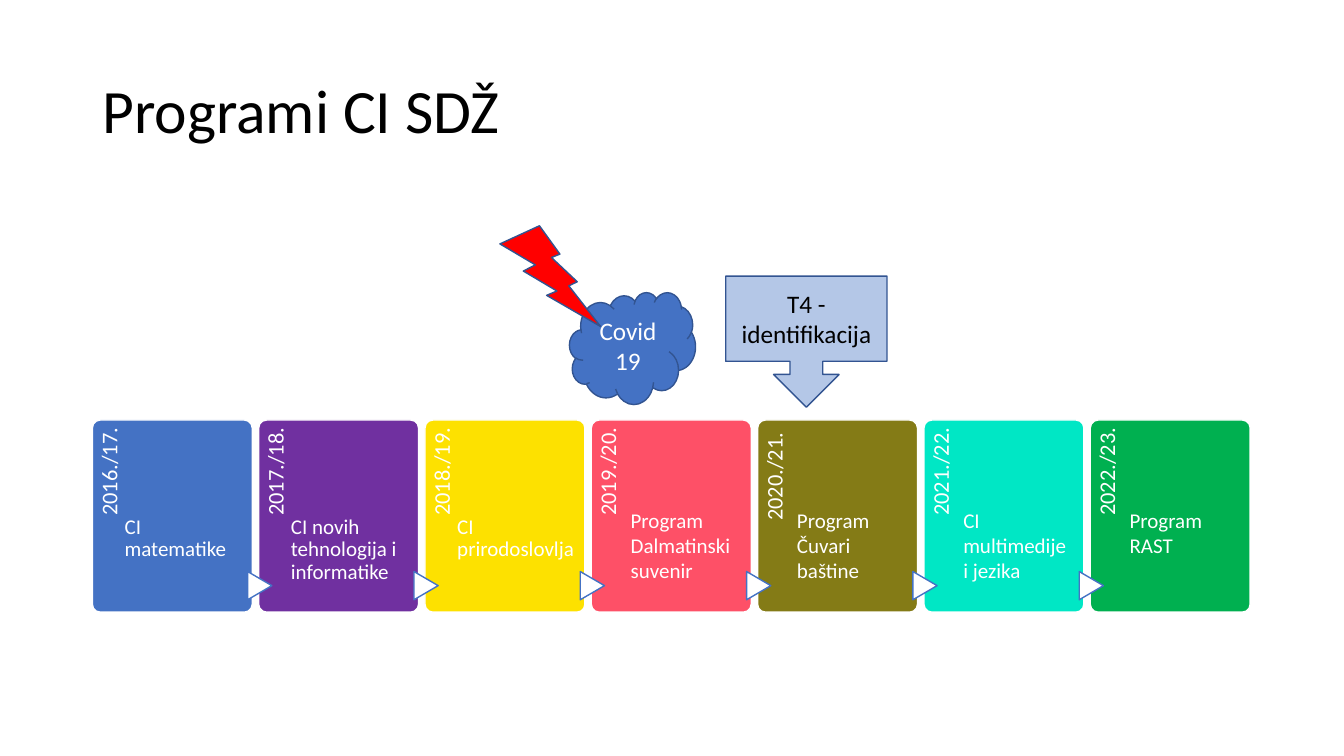
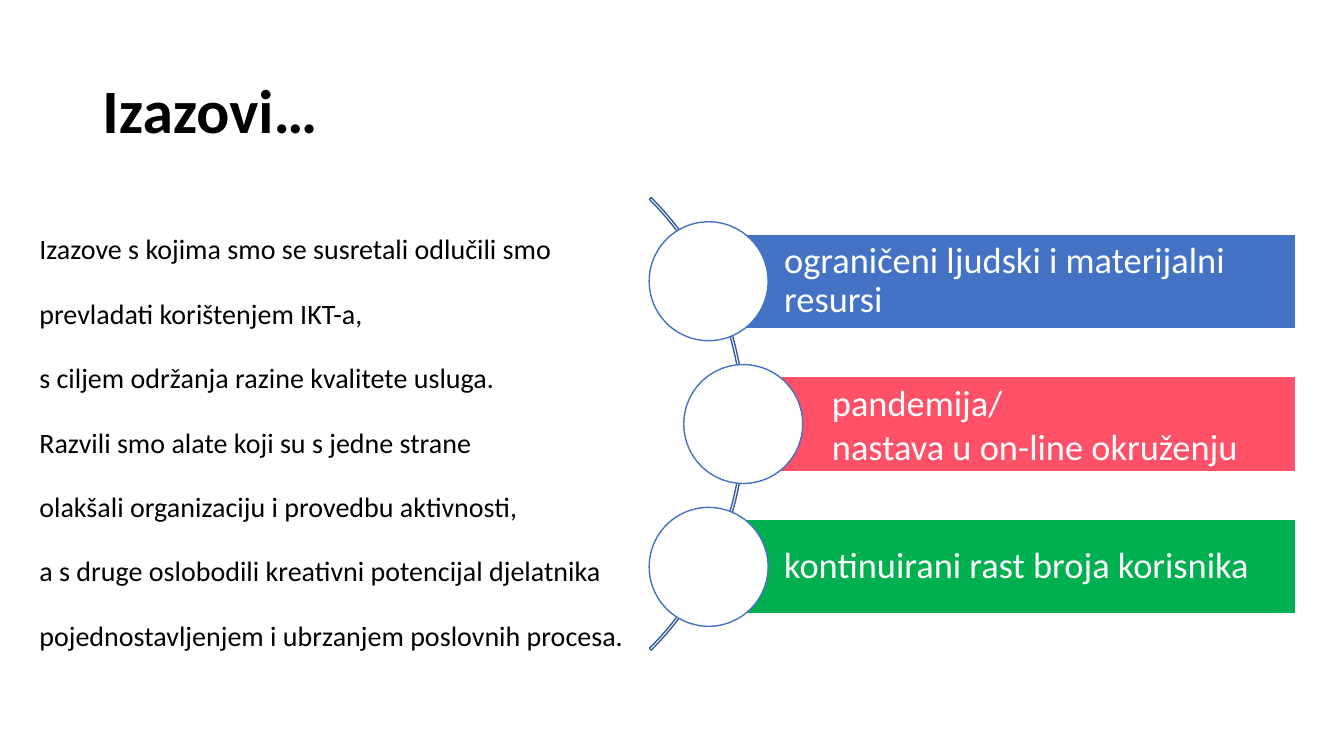
from lxml import etree
from pptx import Presentation
from pptx import util as u
from pptx.dml.color import RGBColor
from pptx.enum import shapes, text

COLS, ROWS = 80, 45
CELL = u.Inches(7.5) / ROWS
FONT = "Calibri"
COLORS = {
    "white": "FFFFFF", "black": "000000", "blue": "4472C4",
    "purple": "7030A0", "yellow": "FDE100", "coral": "FE5067",
    "olive": "847B16", "mint": "00E7C5", "green": "00B050",
    "pale": "B4C7E7", "edge": "325491", "arc": "365B9D", "red": "FF0000",
}
SHAPE = shapes.MSO_SHAPE
ALIGN = text.PP_ALIGN
ANCHOR = text.MSO_ANCHOR


def cells(n):
    """Turn a number of grid cells into a length."""
    return u.Emu(round(n * CELL))


def rgb(name):
    """Look up a colour by name."""
    return RGBColor.from_string(COLORS[name])


class Deck:
    """Holds the style and the current slide."""

    def __init__(self):
        """Start a deck on the grid."""
        self.prs = Presentation()
        self.prs.slide_width, self.prs.slide_height = cells(COLS), cells(ROWS)

    def slide(self, layout, title, bold=False):
        """Add a slide with its title."""
        self.s = self.prs.slides.add_slide(self.prs.slide_layouts[layout])
        sp = self.s.shapes.title
        self.place(sp, 5.5, 2.4, 69, 8.7)
        self.fill_text(sp, [title], 44, "black", spacing=0.9, bold=bold)

    def place(self, sp, x, y, w, h):
        """Move a placeholder to a grid position."""
        sp.left, sp.top, sp.width, sp.height = map(cells, (x, y, w, h))

    def fill_text(self, sp, lines, size, color, align=ALIGN.LEFT, anchor=ANCHOR.MIDDLE,
                  spacing=1.0, before=0, insets=None, bold=False, plain=False):
        """Fill a shape with one paragraph per line."""
        tf = sp.text_frame
        tf.word_wrap = True
        tf.auto_size = text.MSO_AUTO_SIZE.NONE
        tf.vertical_anchor = anchor
        if insets:
            (tf.margin_left, tf.margin_top,
             tf.margin_right, tf.margin_bottom) = map(cells, insets)
        for i, line in enumerate(lines):
            p = tf.add_paragraph() if i else tf.paragraphs[0]
            p.alignment, p.line_spacing = align, spacing
            p.space_before = u.Pt(before if i else 0)
            if plain:
                pPr = p._p.get_or_add_pPr()
                pPr.set("marL", "0")
                pPr.set("indent", "0")
                etree.SubElement(pPr, pPr.tag.replace("pPr", "buNone"))
            r = p.add_run()
            r.text = line
            r.font.name, r.font.size, r.font.bold = FONT, u.Pt(size), bold
            r.font.color.rgb = rgb(color)

    def body(self, lines, x, y, w, h):
        """Put unbulleted lines in the body placeholder."""
        sp = self.s.placeholders[1]
        self.place(sp, x, y, w, h)
        self.fill_text(sp, lines, 20, "black", anchor=ANCHOR.TOP,
                       spacing=1.5, before=10, plain=True)

    def shape(self, kind, x, y, w, h, fill, line, rotation=0, adjust=()):
        """Add a preset shape."""
        sp = self.s.shapes.add_shape(kind, *map(cells, (x, y, w, h)))
        sp.shadow.inherit = False
        sp.rotation = rotation
        for i, value in enumerate(adjust):
            sp.adjustments[i] = value
        if fill:
            sp.fill.solid()
            sp.fill.fore_color.rgb = rgb(fill)
        else:
            sp.fill.background()
        sp.line.color.rgb = rgb(line)
        sp.line.width = u.Pt(1)
        return sp

    def label(self, lines, x, y, w, h, size, rotation=0, **style):
        """Add a white text box."""
        sp = self.s.shapes.add_textbox(*map(cells, (x, y, w, h)))
        sp.rotation = rotation
        self.fill_text(sp, lines, size, "white", anchor=ANCHOR.TOP, **style)

    def year_card(self, i, year, color, lines):
        """Add one school year of the timeline."""
        x, y = 5.5 + 9.9 * i, 25
        self.shape(SHAPE.ROUNDED_RECTANGLE, x, y, 9.52, 11.44, color, "white", adjust=[0.05])
        self.label([year], x - 3.78, y + 3.74, 9.42, 1.92, 16, rotation=270,
                   align=ALIGN.RIGHT, spacing=0.9, insets=(0, 0.36, 0.48, 0))
        if i:
            self.shape(SHAPE.FLOWCHART_EXTRACT, x - 0.78, y + 9.14, 1.68, 1.44,
                       "white", "blue", rotation=90)
        dx, dy, spacing = (1.92, 5.72, 0.9) if i < 3 else (2.34, 5.18, 1.0)
        self.label(lines, x + dx, y + dy, 7.2, 5, 15, spacing=spacing, insets=(0, 0, 0, 0))

    def challenge(self, i, color, lines):
        """Add one bar with its circle on the arc."""
        shift = 2.06 if i == 1 else 0
        x, y = 42.18 + shift, 13.92 + 8.5 * i
        sp = self.shape(SHAPE.RECTANGLE, x, y, 77.1 - x, 5.64, color, "white")
        self.fill_text(sp, lines, 26, "white", spacing=1.0 if shift else 0.9,
                       insets=(5.28 if shift else 4.5, 0.42, 0.42, 0.42))
        self.shape(SHAPE.OVAL, x - 3.54, y - 0.72, 7.08, 7.08, "white", "blue")


def main():
    """Build both slides."""
    deck = Deck()

    deck.slide(5, "Programi CI SDŽ")
    cards = [
        ("2016./17.", "blue", ["CI matematike"]),
        ("2017./18.", "purple", ["CI novih tehnologija i informatike"]),
        ("2018./19.", "yellow", ["CI prirodoslovlja"]),
        ("2019./20.", "coral", ["Program", "Dalmatinski", "suvenir"]),
        ("2020./21. ", "olive", ["Program", "Čuvari", "baštine"]),
        ("2021./22.", "mint", ["CI", "multimedije", "i jezika"]),
        ("2022./23.", "green", ["Program", "RAST"]),
    ]
    for i, card in enumerate(cards):
        deck.year_card(i, *card)
    callout = deck.shape(SHAPE.DOWN_ARROW_CALLOUT, 43.2, 16.44, 9.6, 7.8, "pale", "edge")
    deck.fill_text(callout, ["T4 - identifikacija"], 18, "black", align=ALIGN.CENTER)
    cloud = deck.shape(SHAPE.CLOUD, 33.9, 17.4, 7.5, 6.66, "blue", "edge")
    deck.fill_text(cloud, ["Covid 19"], 18, "white", align=ALIGN.CENTER)
    deck.shape(SHAPE.LIGHTNING_BOLT, 29.76, 13.44, 6, 6, "red", "edge")

    deck.slide(1, "Izazovi…", bold=True)
    deck.body([
        "Izazove s kojima smo se susretali odlučili smo",
        "prevladati korištenjem IKT-a,",
        "s ciljem održanja razine kvalitete usluga.",
        "Razvili smo alate koji su s jedne strane",
        "olakšali organizaciju i provedbu aktivnosti,",
        "a s druge oslobodili kreativni potencijal djelatnika",
        "pojednostavljenjem i ubrzanjem poslovnih procesa.",
    ], 1.74, 12.5, 38, 28)
    deck.shape(SHAPE.BLOCK_ARC, 6.24, 6.18, 38.1, 38.1, None, "arc", adjust=[189, 27, 0.004])
    challenges = [
        ("blue", ["ograničeni ljudski i materijalni resursi"]),
        ("coral", ["pandemija/", "nastava u on-line okruženju"]),
        ("green", ["kontinuirani rast broja korisnika"]),
    ]
    for i, item in enumerate(challenges):
        deck.challenge(i, *item)

    deck.prs.save("out.pptx")


if __name__ == "__main__":
    main()
